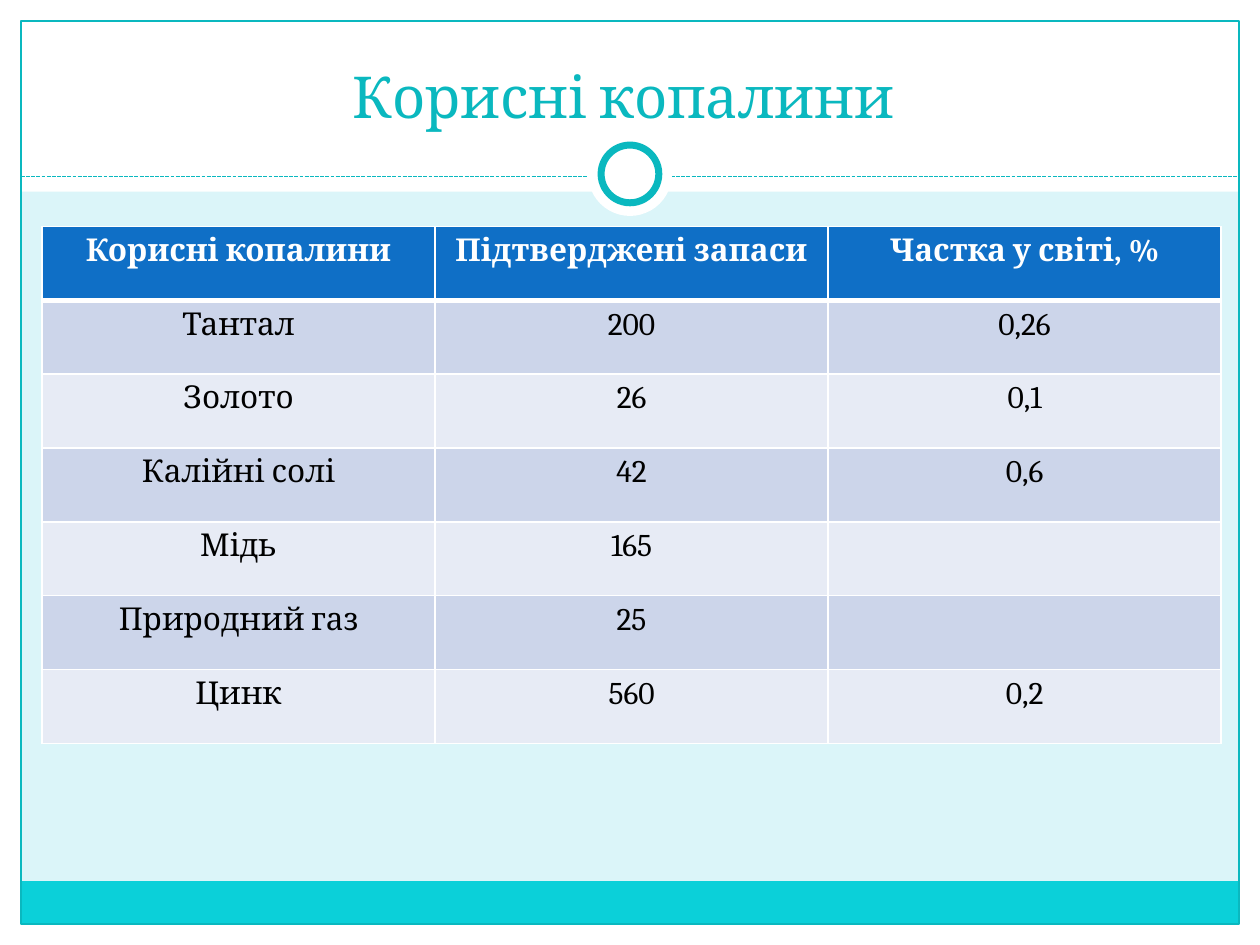
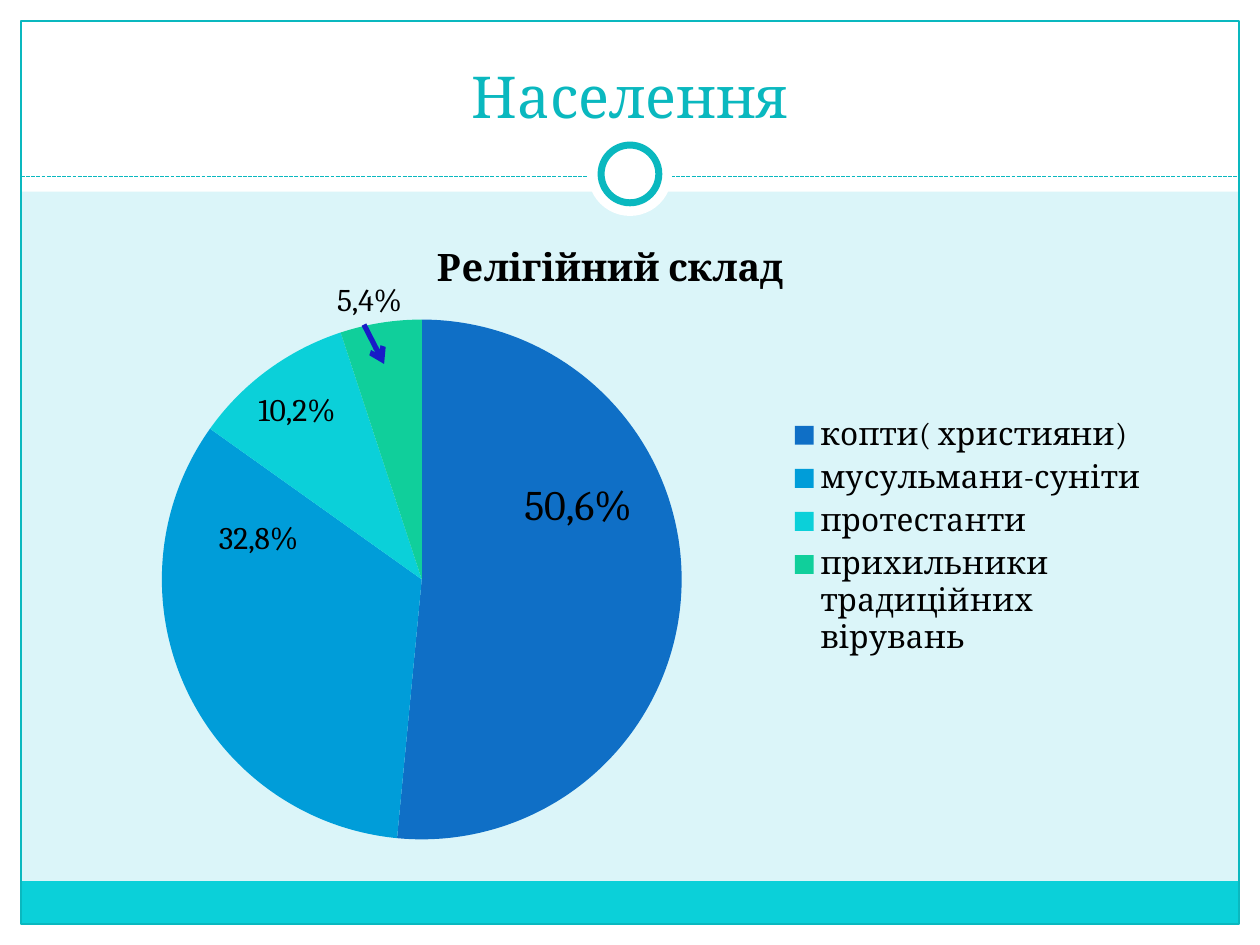
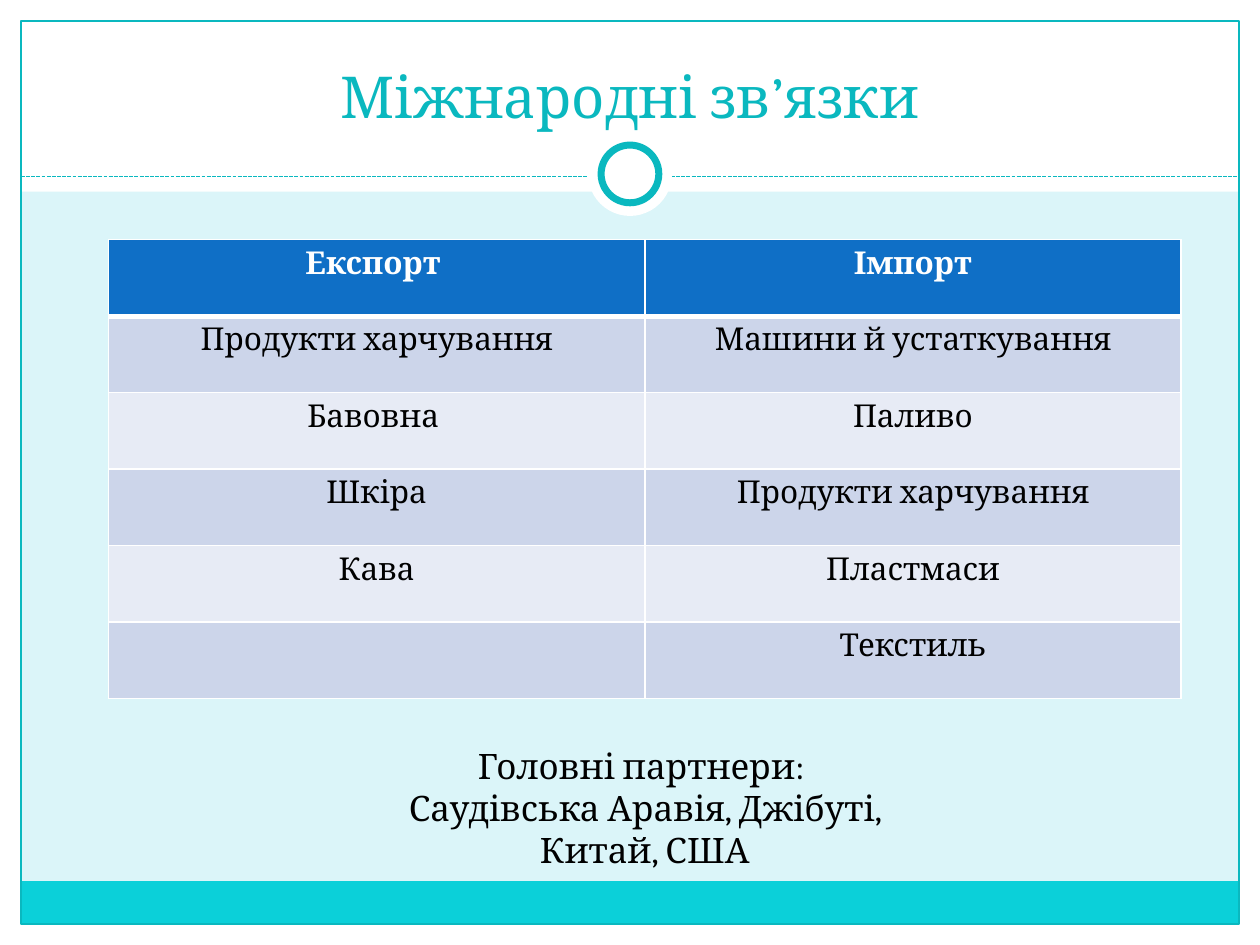
import lxml.etree
import pptx
import pptx.chart.data
import pptx.dml.color
import pptx.enum.chart
import pptx.enum.dml
import pptx.enum.shapes
import pptx.enum.text
import pptx.oxml
import pptx.oxml.ns
import pptx.util

Pt = pptx.util.Pt
Shape = pptx.enum.shapes.MSO_SHAPE
Align = pptx.enum.text.PP_ALIGN
Anchor = pptx.enum.text.MSO_ANCHOR

WIDTH, HEIGHT = 720, 540
MARGIN = 12
HEADER_BOTTOM = 109.5
DIVIDER_TOP = 100.8
FOOTER_TOP = 503.5
FOOTER_BOTTOM = HEIGHT - MARGIN


def color(value):
    return pptx.dml.color.RGBColor.from_string(value)


def add_xml(parent, tag, **attributes):
    element = lxml.etree.SubElement(parent, pptx.oxml.ns.qn(tag))
    for name, value in attributes.items():
        element.set(name, str(value))
    return element


class Deck:
    font = "Cambria"
    background, white, black = "DBF5F9", "FFFFFF", "000000"
    accent, footer, arrow_color = "0AB8BF", "0BD0D9", "181CC7"
    header_fill = "0F6FC6"
    row_fills = ["CCD5EA", "E7EBF5"]
    slice_fills = ["0F6FC6", "009DD9", "0BD0D9", "10CF9B"]

    def __init__(self):
        self.presentation = pptx.Presentation()
        self.presentation.slide_width = Pt(WIDTH)
        self.presentation.slide_height = Pt(HEIGHT)
        self.slide = None

    # Slide with the shared frame and title
    def add_slide(self, title):
        self.slide = self.presentation.slides.add_slide(self.presentation.slide_layouts[6])
        fill = self.slide.background.fill
        fill.solid()
        fill.fore_color.rgb = color(self.background)

        self.add_shape(Shape.RECTANGLE, 0, FOOTER_BOTTOM, WIDTH, MARGIN, self.white)
        self.add_shape(Shape.RECTANGLE, 0, 0, WIDTH, HEADER_BOTTOM, self.white)
        for left in (0, WIDTH - MARGIN):
            self.add_shape(Shape.RECTANGLE, left, 0, MARGIN, HEIGHT, self.white)
        inner_width = WIDTH - 2 * MARGIN
        self.add_shape(Shape.RECTANGLE, MARGIN, FOOTER_TOP, inner_width,
                       FOOTER_BOTTOM - FOOTER_TOP, self.footer)
        self.add_shape(Shape.RECTANGLE, MARGIN, MARGIN, inner_width,
                       HEIGHT - 2 * MARGIN, line=self.accent)
        divider = self.add_line(MARGIN, DIVIDER_TOP, WIDTH - MARGIN, DIVIDER_TOP, self.accent, 0.75)
        divider.line.dash_style = pptx.enum.dml.MSO_LINE.SQUARE_DOT
        self.add_circle(48, self.white)
        self.add_circle(33, self.white, self.accent, 4)

        self.add_text(24, 18, 672, 60, [title], 33, self.accent, Align.CENTER, Anchor.BOTTOM)

    def add_shape(self, kind, left, top, width, height, fill=None, line=None, line_width=0.75):
        shape = self.slide.shapes.add_shape(kind, Pt(left), Pt(top), Pt(width), Pt(height))
        shape.shadow.inherit = False
        if fill:
            shape.fill.solid()
            shape.fill.fore_color.rgb = color(fill)
        else:
            shape.fill.background()
        if line:
            shape.line.color.rgb = color(line)
            shape.line.width = Pt(line_width)
        else:
            shape.line.fill.background()
        return shape

    def add_circle(self, size, fill, line=None, line_width=0.75):
        center_x, center_y = WIDTH / 2, 99.4
        self.add_shape(Shape.OVAL, center_x - size / 2, center_y - size / 2,
                       size, size, fill, line, line_width)

    def add_line(self, start_x, start_y, end_x, end_y, line, width, arrow=False):
        connector = self.slide.shapes.add_connector(
            pptx.enum.shapes.MSO_CONNECTOR.STRAIGHT,
            Pt(start_x), Pt(start_y), Pt(end_x), Pt(end_y))
        connector.line.color.rgb = color(line)
        connector.line.width = Pt(width)
        if arrow:
            line_element = connector._element.spPr.find(pptx.oxml.ns.qn("a:ln"))
            add_xml(line_element, "a:tailEnd", type="arrow")
        add_xml(connector._element.spPr, "a:effectLst")
        return connector

    def style_font(self, font, size, value, bold=False):
        font.name = self.font
        font.size = Pt(size)
        font.bold = bold
        font.color.rgb = color(value)

    def add_run(self, paragraph, text, size, value, align, bold=False):
        paragraph.alignment = align
        run = paragraph.add_run()
        run.text = text
        self.style_font(run.font, size, value, bold)

    def add_text(self, left, top, width, height, lines, size,
                 value=black, align=Align.LEFT, anchor=Anchor.TOP):
        box = self.slide.shapes.add_textbox(Pt(left), Pt(top), Pt(width), Pt(height))
        frame = box.text_frame
        frame.word_wrap = True
        frame.vertical_anchor = anchor
        for index, line in enumerate(lines):
            paragraph = frame.add_paragraph() if index else frame.paragraphs[0]
            self.add_run(paragraph, line, size, value, align)

    # Table: header row, then banded rows
    def add_table(self, left, top, column_width, row_height, rows):
        row_count, column_count = len(rows), len(rows[0])
        table = self.slide.shapes.add_table(
            row_count, column_count, Pt(left), Pt(top),
            Pt(column_width * column_count), Pt(row_height * row_count)).table
        for column in table.columns:
            column.width = Pt(column_width)
        for row_index, row in enumerate(rows):
            table.rows[row_index].height = Pt(row_height)
            is_header = row_index == 0
            fill = self.header_fill if is_header else self.row_fills[(row_index - 1) % 2]
            for column_index, text in enumerate(row):
                cell = table.cell(row_index, column_index)
                self.add_borders(cell, 3 if row_index == 1 else 1, 3 if is_header else 1)
                cell.fill.solid()
                cell.fill.fore_color.rgb = color(fill)
                if text:
                    self.add_run(cell.text_frame.paragraphs[0], text, 18,
                                 self.white if is_header else self.black,
                                 Align.CENTER, is_header)

    def add_borders(self, cell, top_width, bottom_width):
        properties = cell._tc.get_or_add_tcPr()
        widths = {"a:lnL": 1, "a:lnR": 1, "a:lnT": top_width, "a:lnB": bottom_width}
        for tag, width in widths.items():
            border = add_xml(properties, tag, w=Pt(width))
            add_xml(add_xml(border, "a:solidFill"), "a:srgbClr", val=self.white)

    # Pie chart with title and legend
    def add_pie(self, left, top, width, height, title, values):
        data = pptx.chart.data.CategoryChartData()
        data.categories = list(values)
        data.add_series(title, list(values.values()))
        chart = self.slide.shapes.add_chart(
            pptx.enum.chart.XL_CHART_TYPE.PIE,
            Pt(left), Pt(top), Pt(width), Pt(height), data).chart
        self.style_font(chart.font, 18, self.black)
        chart.has_title = True
        self.add_run(chart.chart_title.text_frame.paragraphs[0], title, 21.6,
                     self.black, Align.CENTER, True)
        chart.chart_title.include_in_layout = False
        chart.has_legend = True
        chart.legend.position = pptx.enum.chart.XL_LEGEND_POSITION.RIGHT
        chart.legend.include_in_layout = False
        self.style_font(chart.legend.font, 18, self.black)
        plot = chart.plots[0]
        plot.vary_by_categories = True
        for index, fill in enumerate(self.slice_fills):
            point_fill = plot.series[0].points[index].format.fill
            point_fill.solid()
            point_fill.fore_color.rgb = color(fill)


def main():
    deck = Deck()

    # Mineral resources
    deck.add_slide("Корисні копалини ")
    deck.add_table(24, 129.5, 224.6, 42.2, [
        ["Корисні копалини", "Підтверджені запаси", "Частка у світі, %"],
        ["Тантал", "200", "0,26"],
        ["Золото", "26", "0,1"],
        ["Калійні солі", "42", "0,6"],
        ["Мідь", "165", ""],
        ["Природний газ", "25", ""],
        ["Цинк", "560", "0,2"],
    ])

    # Population by religion
    deck.add_slide("Населення")
    deck.add_pie(33.8, 123.8, 630, 365.8, "Релігійний склад", {
        "копти( християни)": 51,
        "мусульмани-суніти": 33,
        "протестанти": 10,
        "прихильники традиційних вірувань": 5,
    })
    share_labels = [
        ("50,6%", 292.5, 270, 90, 36, 24),
        ("10,2%", 140.5, 219.5, 73.5, 29, 18),
        ("5,4%", 185.5, 156.5, 73.5, 29, 18),
        ("32,8%", 118, 292.5, 73.5, 29, 18),
    ]
    for text, left, top, width, height, size in share_labels:
        deck.add_text(left, top, width, height, [text], size)
    deck.add_line(208, 185.5, 219.5, 208, deck.arrow_color, 3, arrow=True)

    # International trade
    deck.add_slide("Міжнародні зв’язки")
    deck.add_table(62, 137, 306.5, 43.7, [
        ["Експорт ", "Імпорт"],
        ["Продукти харчування", "Машини й устаткування"],
        ["Бавовна ", "Паливо"],
        ["Шкіра", "Продукти харчування"],
        ["Кава", "Пластмаси"],
        ["", "Текстиль"],
    ])
    deck.add_text(219.5, 422, 298, 80,
                  ["Головні партнери: ", "Саудівська Аравія, Джібуті, Китай, США"],
                  20, align=Align.CENTER)

    deck.presentation.save("out.pptx")


if __name__ == "__main__":
    main()
